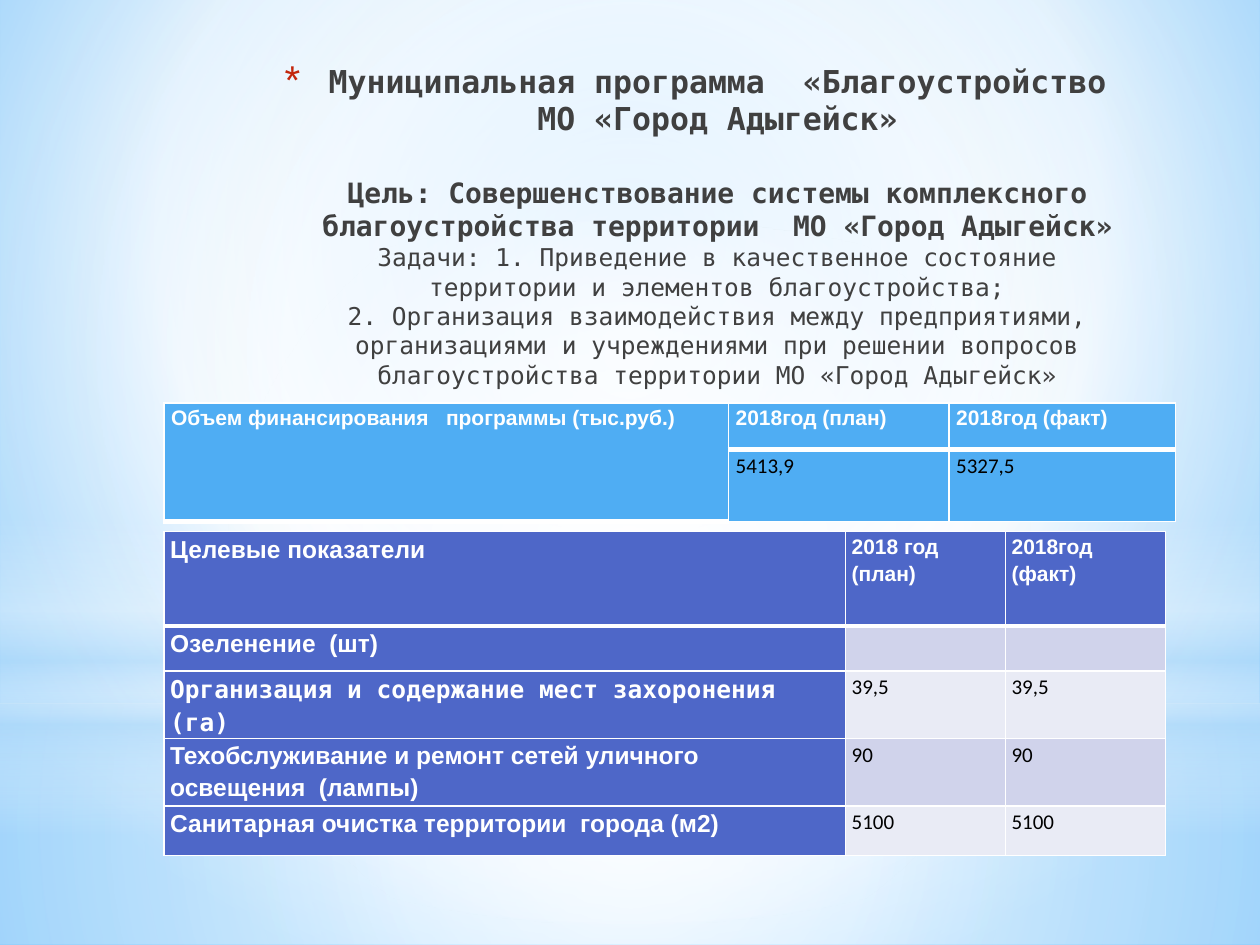
from dataclasses import dataclass

from lxml import etree
from pptx import Presentation
from pptx.dml.color import RGBColor as RGB
from pptx.enum.shapes import MSO_SHAPE as Shape
from pptx.enum.text import MSO_ANCHOR as Anchor, PP_ALIGN as Align
from pptx.oxml.ns import qn
from pptx.util import Pt


@dataclass(frozen=True)
class Theme:
    text: str = "404040"
    bullet: str = "C3260C"
    white: str = "FFFFFF"
    black: str = "000000"
    haze: str = "B4DCFA"
    finance: str = "4FADF3"
    head: str = "4E67C8"
    bands: tuple = ("D0D3EB", "E9EBF5")
    sky: tuple = ("9ED5FF", "FFFFFF", "5BB9FF")
    sans: str = "Arial"
    mono: str = "DejaVu Sans Mono"
    figure: str = "Calibri"
    title: int = 18
    goal: int = 16
    body: int = 14
    small: int = 12


def sub(parent, tag, **attrs):
    return etree.SubElement(parent, qn(tag), {k: str(v) for k, v in attrs.items()})


def write(p, text, *, size, font, color, bold=False):
    """Add text to a paragraph; each newline becomes a line break."""
    for i, line in enumerate(text.split("\n")):
        if i:
            p.add_line_break()
        if line:
            r = p.add_run()
            r.text = line
            r.font.size, r.font.name, r.font.bold = Pt(size), font, bold
            r.font.color.rgb = RGB.from_string(color)


def gradient(holder, stops, rect=None, angle=90):
    """Turn the holder's solid fill into a circular or linear gradient."""
    solid = holder.find(".//" + qn("a:solidFill"))
    grad = etree.Element(qn("a:gradFill"), rotWithShape="1")
    stop_list = sub(grad, "a:gsLst")
    for pos, color, alpha in stops:
        stop = sub(stop_list, "a:gs", pos=pos * 1000)
        clr = sub(stop, "a:srgbClr", val=color)
        if alpha < 100:
            sub(clr, "a:alpha", val=alpha * 1000)
    if rect:
        path = sub(grad, "a:path", path="circle")
        sub(path, "a:fillToRect", **{k: v * 1000 for k, v in zip("ltrb", rect)})
    else:
        sub(grad, "a:lin", ang=angle * 60000, scaled=0)
    solid.getparent().replace(solid, grad)


class Deck:
    def __init__(self, prs, theme):
        self.t = theme
        self.s = prs.slides.add_slide(prs.slide_layouts[6])

    def background(self, stops, rect):
        self.s.background.fill.solid()
        gradient(self.s.background._cSld, stops, rect)

    def glow(self, kind, box, stops, rect=None):
        sp = self.s.shapes.add_shape(kind, *map(Pt, box))
        sp.shadow.inherit = False
        sp.line.fill.background()
        sp.fill.solid()
        gradient(sp._element.spPr, stops, rect)

    def heading(self, box, parts):
        tf = self.s.shapes.add_textbox(*map(Pt, box)).text_frame
        tf.word_wrap, tf.vertical_anchor = True, Anchor.TOP
        p = tf.paragraphs[0]
        p.alignment = Align.CENTER
        pPr = p._p.get_or_add_pPr()
        indent = Pt(25.2)
        pPr.set("marL", str(indent))
        pPr.set("indent", str(-indent))
        sub(sub(pPr, "a:buClr"), "a:srgbClr", val=self.t.bullet)
        sub(pPr, "a:buSzPct", val=128000)
        sub(pPr, "a:buFont", typeface=self.t.sans)
        sub(pPr, "a:buChar", char="*")
        for text, size, bold in parts:
            write(p, text, size=size, font=self.t.mono, color=self.t.text, bold=bold)

    def table(self, left, top, cols, rows):
        frame = self.s.shapes.add_table(len(rows), len(cols), Pt(left), Pt(top),
                                        Pt(sum(cols)), Pt(sum(rows)))
        tbl = frame.table
        tbl.first_row = tbl.horz_banding = False
        for col, width in zip(tbl.columns, cols):
            col.width = Pt(width)
        for row, height in zip(tbl.rows, rows):
            row.height = Pt(height)
        return tbl

    def cell(self, cell, text, *, fill, inset, bottom=1, **style):
        cell.margin_left = cell.margin_right = Pt(inset)
        cell.margin_top = cell.margin_bottom = 0
        cell.fill.solid()
        cell.fill.fore_color.rgb = RGB.from_string(fill)
        tcPr = cell._tc.get_or_add_tcPr()
        for i, side in enumerate("LRTB"):
            ln = etree.Element(qn("a:ln" + side), w=str(Pt(bottom if side == "B" else 1)))
            sub(sub(ln, "a:solidFill"), "a:srgbClr", val=self.t.white)
            tcPr.insert(i, ln)
        tf = cell.text_frame
        for i, line in enumerate(text.split("\n")):
            p = tf.add_paragraph() if i else tf.paragraphs[0]
            p.line_spacing = 1.15
            write(p, line, **style)


def main():
    t = Theme()
    prs = Presentation()
    prs.slide_width, prs.slide_height = Pt(720), Pt(540)
    deck = Deck(prs, t)
    centre = (50, 50, 50, 50)

    # Background and soft light
    deck.background([(pos, c, 100) for pos, c in zip((0, 60, 100), t.sky)], (20, 10, 20, 60))
    deck.glow(Shape.RECTANGLE, (0, 401.8, 720, 138.2),
              [(0, t.white, 91), (37, t.white, 76), (100, t.haze, 79)], centre)
    deck.glow(Shape.RECTANGLE, (0, 0, 720, 401.8),
              [(0, t.white, 89), (48, t.white, 62), (100, t.haze, 79)], centre)
    deck.glow(Shape.RECTANGLE, (0, 296.6, 720, 180),
              [(0, t.white, 0), (29, t.white, 30), (45, t.haze, 40),
               (55, t.white, 26), (65, t.haze, 60), (100, t.white, 0)])
    deck.glow(Shape.OVAL, (0, 126, 720, 401.8),
              [(0, t.white, 100), (56, t.white, 0)], centre)

    # Programme name, goal and tasks
    deck.heading((141.1, 31.7, 512.6, 73.4), [
        ("Муниципальная программа  «Благоустройство МО «Город Адыгейск»\n\n", t.title, True),
        ("Цель: Совершенствование системы комплексного благоустройства "
         "территории  МО «Город Адыгейск»\n", t.goal, True),
        ("Задачи: 1. Приведение в качественное состояние территории и элементов "
         "благоустройства;\n2. Организация взаимодействия между предприятиями, "
         "организациями и учреждениями при решении вопросов благоустройства "
         "территории МО «Город Адыгейск»", t.body, False)])

    label = dict(size=t.small, font=t.sans, color=t.white, bold=True)
    figure = dict(size=t.small, font=t.figure, color=t.black)
    left = 93.6

    # Funding table
    funding = [("Объем финансирования   программы (тыс.руб.)",
                "2018год (план)", "2018год (факт)"),
               ("", "5413,9", "5327,5")]
    tbl = deck.table(left, 230.4, (322.6, 126, 129.6), (26.6, 41))
    for i, row in enumerate(funding):
        for j, text in enumerate(row):
            deck.cell(tbl.cell(i, j), text, fill=t.finance, inset=4.2,
                      bottom=1 if i and j else 3, **(figure if i else label))
    tbl.cell(0, 0).merge(tbl.cell(1, 0))

    # Target indicators table
    targets = [("Целевые показатели", "2018 год\n(план)", "2018год\n(факт)"),
               ("Озеленение  (шт)", "", ""),
               ("Организация и содержание мест захоронения (га)", "39,5", "39,5"),
               ("Техобслуживание и ремонт сетей уличного освещения  (лампы)", "90", "90"),
               ("Санитарная очистка территории  города (м2)", "5100", "5100")]
    mono_row = 2
    tbl = deck.table(left, 303.8, (389.5, 91.4, 91.4), (54, 25.6, 33.8, 33.8, 28.1))
    for i, row in enumerate(targets):
        for j, text in enumerate(row):
            style = dict(figure if i and j else label)
            if j == 0:
                style.update(size=t.body, font=t.mono if i == mono_row else t.sans)
            deck.cell(tbl.cell(i, j), text, inset=3.6, bottom=1 if i else 3,
                      fill=t.bands[(i - 1) % 2] if i and j else t.head, **style)

    prs.save("out.pptx")


if __name__ == "__main__":
    main()
